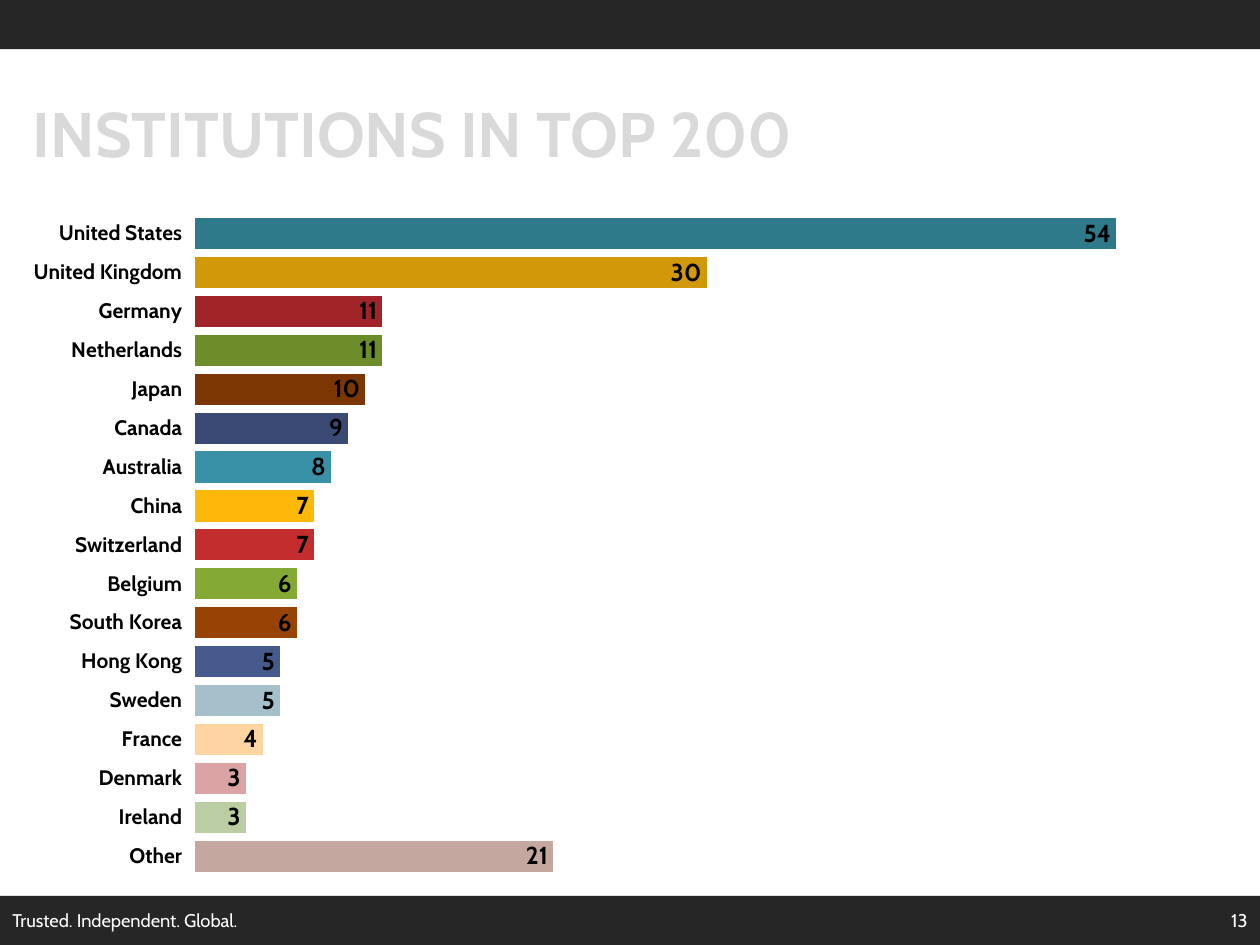
"""Build a slide with a bar chart of institutions in the top 200 by country."""
from lxml.etree import SubElement
from pptx import Presentation
from pptx.chart.data import CategoryChartData
from pptx.dml.color import RGBColor
from pptx.enum.chart import XL_CHART_TYPE, XL_LABEL_POSITION, XL_TICK_LABEL_POSITION, XL_TICK_MARK
from pptx.enum.shapes import MSO_SHAPE
from pptx.enum.text import MSO_ANCHOR, PP_ALIGN
from pptx.oxml.ns import qn
from pptx.util import Inches, Pt

FONT = "Cabin"
WIDTH, HEIGHT, BAND, MARGIN = 10, 7.5, 0.39, 0.16
COLORS = {"band": "262626", "title": "D9D9D9", "white": "FFFFFF", "black": "000000"}
COUNTRIES = [
    ("United States", 54, "2E798A"),
    ("United Kingdom", 30, "D19809"),
    ("Germany", 11, "A02428"),
    ("Netherlands", 11, "6C8D2A"),
    ("Japan", 10, "7B3603"),
    ("Canada", 9, "3A4A75"),
    ("Australia", 8, "3891A7"),
    ("China", 7, "FEB80A"),
    ("Switzerland", 7, "C32D2E"),
    ("Belgium", 6, "84AA33"),
    ("South Korea", 6, "964305"),
    ("Hong Kong", 5, "475A8D"),
    ("Sweden", 5, "A5C0CB"),
    ("France", 4, "FED5A0"),
    ("Denmark", 3, "DBA3A4"),
    ("Ireland", 3, "BACDA3"),
    ("Other", 21, "C4A79F"),
]
PLOT = {"x": 0.143, "y": 0, "w": 0.84, "h": 1}


def style_font(font, size, color, bold=False):
    font.name, font.size, font.bold = FONT, Pt(size), bold
    font.color.rgb = RGBColor.from_string(COLORS[color])


def write_text(box, text, size, color, bold=False, align=PP_ALIGN.LEFT):
    frame = box.text_frame
    frame.word_wrap = True
    frame.vertical_anchor = MSO_ANCHOR.MIDDLE
    para = frame.paragraphs[0]
    para.alignment = align
    span = para.add_run()
    span.text = text
    style_font(span.font, size, color, bold)


def place(*lengths):
    return [Inches(length) for length in lengths]


def add_band(page, top):
    band = page.shapes.add_shape(MSO_SHAPE.RECTANGLE, *place(0, top, WIDTH, BAND))
    band.shadow.inherit = False
    band.fill.solid()
    band.fill.fore_color.rgb = RGBColor.from_string(COLORS["band"])
    band.line.fill.background()


def set_plot_layout(chart):
    area = chart._chartSpace.chart.plotArea
    for old in area.findall(qn("c:layout")):
        area.remove(old)
    layout = SubElement(area, qn("c:layout"))
    area.insert(0, layout)
    manual = SubElement(layout, qn("c:manualLayout"))
    settings = {"layoutTarget": "inner", "xMode": "edge", "yMode": "edge", **PLOT}
    for name, value in settings.items():
        SubElement(manual, qn(f"c:{name}")).set("val", str(value))


def add_country_chart(page):
    names, counts, fills = zip(*COUNTRIES)
    data = CategoryChartData()
    data.categories = names
    data.add_series("Series 1", counts)
    chart = page.shapes.add_chart(
        XL_CHART_TYPE.BAR_CLUSTERED, *place(MARGIN, 1.7, WIDTH - 2 * MARGIN, 5.25), data
    ).chart
    chart.has_legend = chart.has_title = False
    style_font(chart.font, 10, "white")
    set_plot_layout(chart)

    axis = chart.category_axis
    axis.reverse_order = True
    axis.major_tick_mark = XL_TICK_MARK.OUTSIDE
    axis.tick_label_position = XL_TICK_LABEL_POSITION.NEXT_TO_AXIS
    axis.format.line.fill.background()
    style_font(axis.tick_labels.font, 12, "black", bold=True)
    scale = chart.value_axis
    scale.minimum_scale, scale.maximum_scale = 0, 60
    scale.has_major_gridlines = False
    scale.visible = False

    plot = chart.plots[0]
    plot.gap_width = 25
    plot.vary_by_categories = False
    series = plot.series[0]
    for index, color in enumerate(fills):
        fill = series.points[index].format.fill
        fill.solid()
        fill.fore_color.rgb = RGBColor.from_string(color)
    labels = series.data_labels
    labels.show_value = True
    labels.position = XL_LABEL_POSITION.INSIDE_END
    style_font(labels.font, 14, "black", bold=True)


def main():
    deck = Presentation()
    deck.slide_width, deck.slide_height = place(WIDTH, HEIGHT)
    page = deck.slides.add_slide(deck.slide_layouts[5])
    footer_top = HEIGHT - BAND
    for top in (footer_top, 0):
        add_band(page, top)
    add_country_chart(page)

    title = page.shapes.title
    title.left, title.top, title.width, title.height = place(MARGIN, 0.55, WIDTH - 2 * MARGIN, 1)
    write_text(title, "INSTITUTIONS IN TOP 200", 36, "title", bold=True)
    split = 7.67
    footers = [
        ("Trusted. Independent. Global.", 0, split, PP_ALIGN.LEFT),
        ("13", split, WIDTH - split, PP_ALIGN.RIGHT),
    ]
    for text, left, width, align in footers:
        box = page.shapes.add_textbox(*place(left, footer_top, width, BAND))
        write_text(box, text, 10.5, "white", align=align)
    deck.save("out.pptx")


if __name__ == "__main__":
    main()
